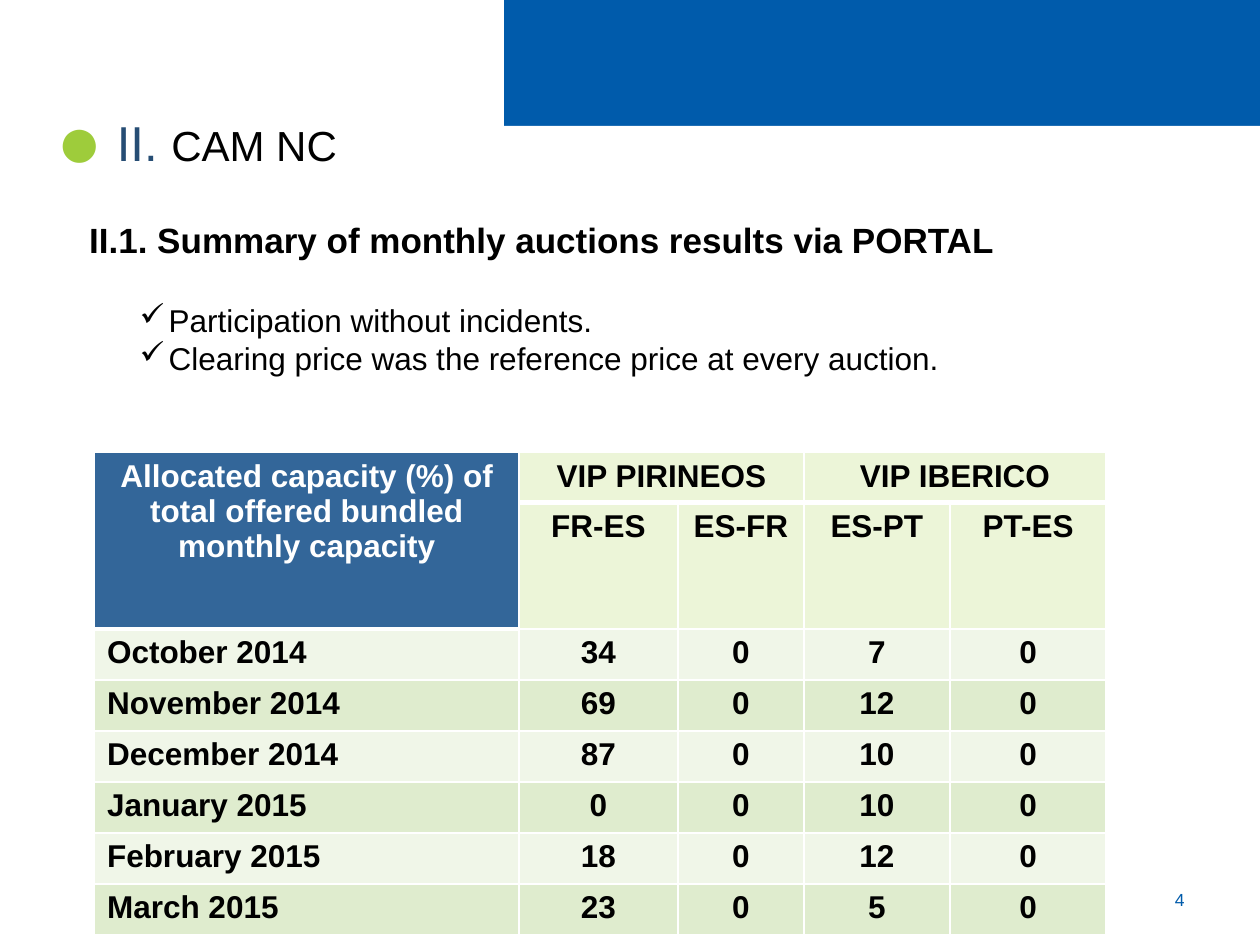
from lxml import etree
from pptx import Presentation
from pptx.dml.color import RGBColor
from pptx.enum.shapes import MSO_SHAPE
from pptx.enum.text import MSO_ANCHOR, PP_ALIGN
from pptx.oxml.ns import qn
from pptx.util import Inches, Pt

RECTANGLE = MSO_SHAPE.RECTANGLE
LEFT, CENTER, RIGHT, JUSTIFY = PP_ALIGN.LEFT, PP_ALIGN.CENTER, PP_ALIGN.RIGHT, PP_ALIGN.JUSTIFY
TOP, MIDDLE, BOTTOM = MSO_ANCHOR.TOP, MSO_ANCHOR.MIDDLE, MSO_ANCHOR.BOTTOM
FONT = "Arial"
COLORS = {
    "blue": "005BAB", "green": "9ECC3B", "navy": "264D74", "black": "000000",
    "white": "FFFFFF", "header": "336699", "subheader": "ECF5D8",
    "light": "F0F6E8", "dark": "DFECCE",
}

HEADING = "II.1. Summary of monthly auctions results via PORTAL"
FINDINGS = [
    "Participation without incidents.",
    "Clearing price was the reference price at every auction.",
]
TABLE_TITLE = "Allocated capacity (%) of total offered bundled monthly capacity"
INTERCONNECTIONS = ["VIP PIRINEOS", "VIP IBERICO"]
DIRECTIONS = ["FR-ES", "ES-FR", "ES-PT", "PT-ES"]
MONTHS = [
    ("October 2014", 34, 0, 7, 0),
    ("November 2014", 69, 0, 12, 0),
    ("December 2014", 87, 0, 10, 0),
    ("January 2015", 0, 0, 10, 0),
    ("February 2015", 18, 0, 12, 0),
    ("March 2015", 23, 0, 5, 0),
]
COLUMN_WIDTHS = [3.37, 1.26, 1, 1.16, 1.24]
ROW_HEIGHTS = [0.4, 1] + [0.405] * len(MONTHS)
WAVE_START = (10, 0.61)
WAVE_CURVES = [
    ((5.1, 0.94), (2.76, 0.21), (1.31, 0.21)),
    ((0.23, 0.21), (0.03, 0.79), (0, 1.1)),
]
CURVE_STEPS = 40


def color(name):
    return RGBColor.from_string(COLORS[name])


def style(font, size, color_name, bold=False):
    font.name, font.size, font.bold = FONT, Pt(size), bold
    font.color.rgb = color(color_name)


def paint(shape, color_name):
    shape.shadow.inherit = False
    shape.fill.solid()
    shape.fill.fore_color.rgb = color(color_name)
    shape.line.fill.background()


def curve_points(start, first, second, end):
    for step in range(1, CURVE_STEPS + 1):
        t = step / CURVE_STEPS
        weights = ((1 - t) ** 3, 3 * t * (1 - t) ** 2, 3 * t ** 2 * (1 - t), t ** 3)
        yield tuple(sum(weight * point[axis] for weight, point in
                        zip(weights, (start, first, second, end))) for axis in (0, 1))


def add_wave(slide):
    band = slide.shapes.add_shape(RECTANGLE, 0, 0, Inches(10), Inches(1.15))
    paint(band, "blue")
    points, start = [], WAVE_START
    for curve in WAVE_CURVES:
        points += curve_points(start, *curve)
        start = curve[-1]
    points += [(0, 7.5), (10, 7.5)]
    builder = slide.shapes.build_freeform(*WAVE_START, scale=Inches(1))
    builder.add_line_segments(points, close=True)
    paint(builder.convert_to_shape(), "white")


def add_text(slide, box, runs, align=LEFT, anchor=TOP):
    frame = slide.shapes.add_textbox(*map(Inches, box)).text_frame
    frame.word_wrap = True
    frame.vertical_anchor = anchor
    paragraph = frame.paragraphs[0]
    paragraph.alignment = align
    for text, size, color_name, bold in runs:
        run = paragraph.add_run()
        run.text = text
        style(run.font, size, color_name, bold)
    return frame


def indent(paragraph, margin, first_line):
    properties = paragraph._p.get_or_add_pPr()
    properties.set("marL", str(Inches(margin)))
    properties.set("indent", str(Inches(first_line)))
    return properties


def add_summary(slide):
    frame = add_text(slide, (0.51, 1.62, 8.74, 2.13),
                     [(HEADING, 20, "black", True)], JUSTIFY)
    frame.paragraphs[0].line_spacing = 1.2
    indent(frame.paragraphs[0], 0.69, -0.59)
    for index, finding in enumerate(FINDINGS):
        paragraph = frame.add_paragraph()
        paragraph.text = finding
        paragraph.alignment = JUSTIFY
        paragraph.space_before = Pt(0 if index else 23)
        properties = indent(paragraph, 0.73, -0.23)
        etree.SubElement(properties, qn("a:buChar")).set("char", "✓")
        style(paragraph.font, 18, "black")


def add_borders(cell, bottom):
    properties = cell._tc.get_or_add_tcPr()
    sides = [("a:lnL", 1), ("a:lnR", 1), ("a:lnT", 1), ("a:lnB", bottom)]
    for position, (tag, width) in enumerate(sides):
        line = etree.Element(qn(tag), w=str(Pt(width)))
        fill = etree.SubElement(line, qn("a:solidFill"))
        etree.SubElement(fill, qn("a:srgbClr")).set("val", COLORS["white"])
        properties.insert(position, line)


def add_capacity_table(slide):
    rows = [
        [TABLE_TITLE, INTERCONNECTIONS[0], "", INTERCONNECTIONS[1], ""],
        ["", *DIRECTIONS],
        *MONTHS,
    ]
    table = slide.shapes.add_table(
        len(rows), len(COLUMN_WIDTHS), Inches(0.75), Inches(3.59),
        Inches(sum(COLUMN_WIDTHS)), Inches(sum(ROW_HEIGHTS))).table
    for column, width in zip(table.columns, COLUMN_WIDTHS):
        column.width = Inches(width)
    for row, height in zip(table.rows, ROW_HEIGHTS):
        row.height = Inches(height)
    for first, last in [((0, 0), (1, 0)), ((0, 1), (0, 2)), ((0, 3), (0, 4))]:
        table.cell(*first).merge(table.cell(*last))
    for r, values in enumerate(rows):
        for c, value in enumerate(values):
            cell = table.cell(r, c)
            is_title = r < 2 and c == 0
            fill = "header" if is_title else "subheader" if r < 2 else ("light", "dark")[r % 2]
            cell.fill.solid()
            cell.fill.fore_color.rgb = color(fill)
            add_borders(cell, 3 if r == 0 or is_title else 1)
            if cell.is_spanned:
                continue
            cell.text_frame.text = str(value)
            paragraph = cell.text_frame.paragraphs[0]
            paragraph.alignment = LEFT if r > 1 and c == 0 else CENTER
            style(paragraph.runs[0].font, 18, "white" if is_title else "black", True)


def main():
    presentation = Presentation()
    presentation.slide_width, presentation.slide_height = Inches(10), Inches(7.5)
    slide = presentation.slides.add_slide(presentation.slide_layouts[6])
    add_wave(slide)
    add_text(slide, (8.94, 6.94, 0.56, 0.4), [("4", 10, "blue", False)], RIGHT, MIDDLE)
    add_text(slide, (0.35, 0.57, 0.55, 0.94), [("●", 44, "green", False)], CENTER, BOTTOM)
    add_summary(slide)
    add_capacity_table(slide)
    add_text(slide, (0.83, 0.84, 9.17, 0.57),
             [("II. ", 28, "navy", False), ("CAM NC", 24, "black", False)])
    presentation.save("out.pptx")


if __name__ == "__main__":
    main()
